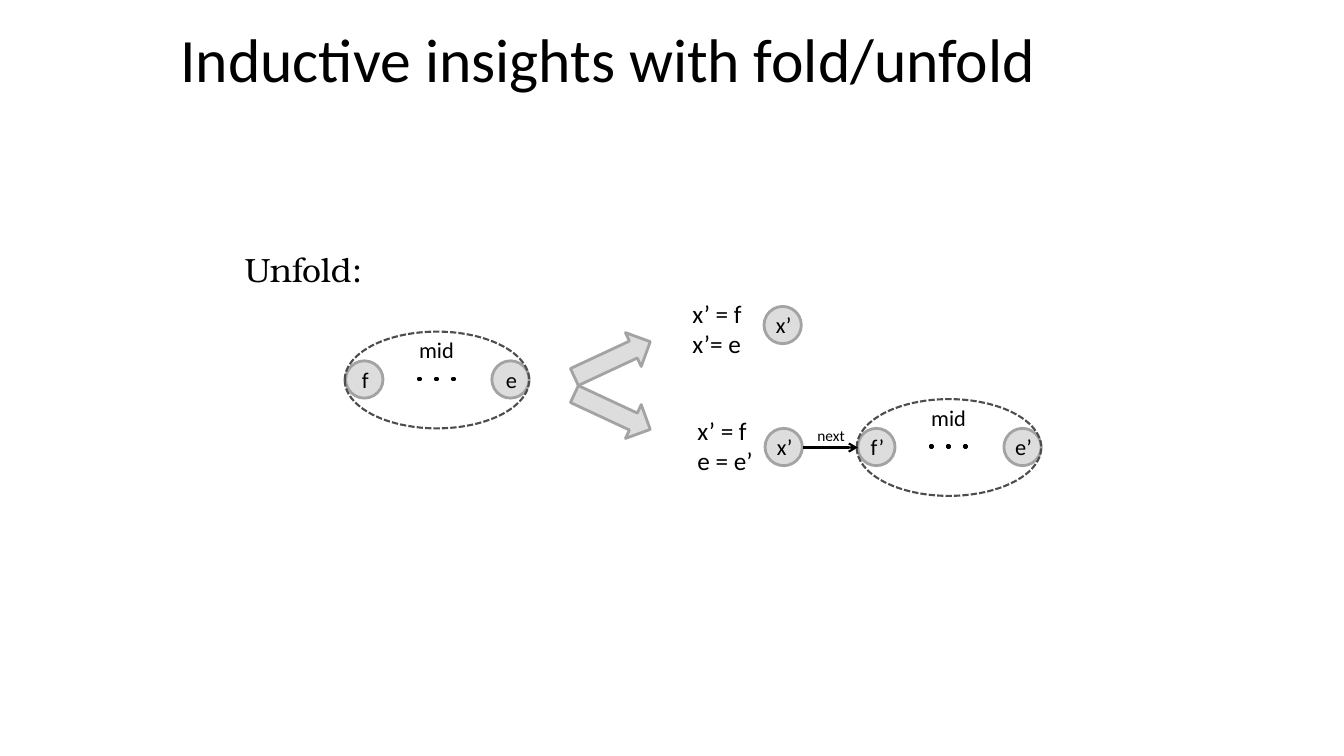
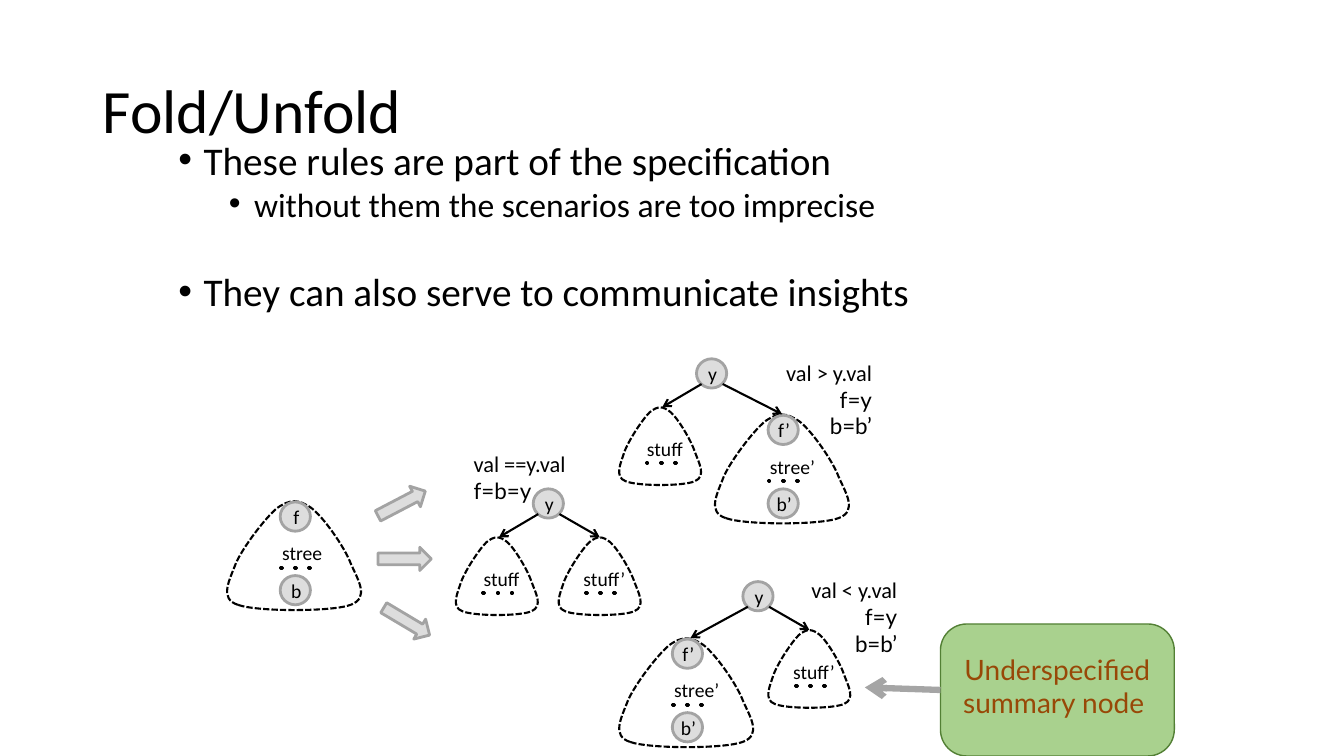
from pptx import Presentation
from pptx.dml.color import RGBColor
from pptx.enum.dml import MSO_LINE
from pptx.enum.shapes import MSO_CONNECTOR, MSO_SHAPE
from pptx.enum.text import MSO_ANCHOR, MSO_AUTO_SIZE, PP_ALIGN
from pptx.oxml.ns import qn
from pptx.oxml.xmlchemy import OxmlElement
from pptx.util import Emu, Pt

PX = 9144
OVAL, RECT = MSO_SHAPE.OVAL, MSO_SHAPE.RECTANGLE
ARROW, ROUND = MSO_SHAPE.RIGHT_ARROW, MSO_SHAPE.ROUNDED_RECTANGLE
LINE, DASH = MSO_CONNECTOR.STRAIGHT, MSO_LINE.SQUARE_DOT
LEFT, MID, RIGHT = PP_ALIGN.LEFT, PP_ALIGN.CENTER, PP_ALIGN.RIGHT
CENTER, TOP = MSO_ANCHOR.MIDDLE, MSO_ANCHOR.TOP
FIXED = MSO_AUTO_SIZE.NONE
BODY, ALT, SERIF = "Calibri", "Lato", "TeX Gyre Bonum"
COLORS = {
    "ink": "000000", "node": "DDDDDD", "edge": "A3A3A3", "ring": "4D4D4D",
    "point": "A5A5A5", "note": "A9D18E", "rim": "538035", "rust": "984807",
}
BLOB = (134, 108)
START = (11, 103)
CURVES = [
    ((-8, 97), (3, 78), (9, 62)),
    ((16, 46), (38, 17), (50, 7)),
    ((63, -2), (71, -2), (84, 7)),
    ((96, 16), (117, 46), (123, 62)),
    ((130, 78), (142, 96), (123, 103)),
    ((105, 110), (30, 110), (11, 103)),
]


def px(*vals):
    """Turn px lengths into EMU."""
    return [Emu(round(val * PX)) for val in vals]


def tint(name):
    """Return a named colour."""
    return RGBColor.from_string(COLORS[name])


def apply(item, form):
    """Set each attribute in a format dict."""
    for key, val in form.items():
        setattr(item, key, val)


def move(item, box):
    """Place a shape or placeholder."""
    apply(item, dict(zip(("left", "top", "width", "height"), px(*box))))


def write(frame, lines, size, face=BODY, color="ink", **form):
    """Fill a frame with lines in one style."""
    frame.text = "\n".join(lines)
    for para in frame.paragraphs:
        apply(para, form)
        apply(para.font, {"size": Pt(size), "name": face})
        para.font.color.rgb = tint(color)


def paint(shape, fill, edge, width):
    """Set fill and outline, without a shadow."""
    shape.shadow.inherit = False
    if fill:
        shape.fill.solid()
        shape.fill.fore_color.rgb = tint(fill)
    else:
        shape.fill.background()
    shape.line.color.rgb = tint(edge)
    shape.line.width = Pt(width)


def draw(slide, kind, box, fill="node", edge="edge", width=2):
    """Add a painted preset shape."""
    shape = slide.shapes.add_shape(kind, *px(*box))
    paint(shape, fill, edge, width)
    return shape


def label(slide, box, lines, size, face=BODY, align=LEFT):
    """Add a text box that does not wrap."""
    frame = slide.shapes.add_textbox(*px(*box)).text_frame
    frame.word_wrap = False
    write(frame, lines, size, face, alignment=align)
    return frame


def rule(slide, box, lines, align):
    """Add a rule label whose later lines use the second face."""
    frame = label(slide, box, lines, 16, align=align)
    for para in frame.paragraphs[1:]:
        para.font.name = ALT


def node(slide, x, y, text, wide=30, high=29, size=14):
    """Add a round node with its name."""
    frame = draw(slide, OVAL, (x, y, wide, high)).text_frame
    apply(frame, {"margin_left": Emu(2 * PX), "margin_right": 0,
                  "vertical_anchor": CENTER, "word_wrap": True})
    write(frame, [text], size, alignment=MID)


def dots(slide, x, y, gap=14, high=1):
    """Add three dots in a row."""
    for step in range(3):
        draw(slide, RECT, (x + step * gap, y, 2, high), "ink", "ink")


def block(slide, x, y, turn=0, wide=53, high=23):
    """Add a block arrow, turned by some degrees."""
    draw(slide, ARROW, (x, y, wide, high)).rotation = turn


def link(slide, start, end, color="ink", width=1.5):
    """Add a straight line with an arrowhead at its end."""
    line = slide.shapes.add_connector(LINE, *px(*start, *end))
    line.line.color.rgb = tint(color)
    line.line.width = Pt(width)
    props = line.element.spPr
    head = OxmlElement("a:tailEnd")
    head.set("type", "arrow")
    props.find(qn("a:ln")).append(head)
    props.append(OxmlElement("a:effectLst"))
    return line


def trace(path, tag, spots=()):
    """Append one drawing step to an outline."""
    step = OxmlElement(tag)
    for x, y in spots:
        spot = OxmlElement("a:pt")
        spot.set("x", str(x))
        spot.set("y", str(y))
        step.append(spot)
    path.append(step)


def blob(slide, x, y, wide, high):
    """Add a dashed rounded triangle made of curves."""
    pen = slide.shapes.build_freeform(*START, scale=PX)
    pen.add_line_segments([curve[-1] for curve in CURVES], close=True)
    shape = pen.convert_to_shape()
    move(shape, (x, y, wide, high))
    path = next(shape.element.iter(qn("a:path")))
    for step in list(path):
        path.remove(step)
    for key, val in zip("wh", BLOB):
        path.set(key, str(val))
    trace(path, "a:moveTo", [START])
    for curve in CURVES:
        trace(path, "a:cubicBezTo", curve)
    trace(path, "a:close")
    paint(shape, None, "ink", 1.5)
    shape.line.dash_style = DASH


def stuff(slide, x, y, mark=""):
    """Add a small summary of a subtree."""
    blob(slide, x, y, 82, 77)
    dots(slide, x + 27, y + 55)
    box = (x + 15, y + 25, 62, 34) if mark else (x + 18, y + 25, 57, 34)
    label(slide, box, ["stuff" + mark], 14)


def stree(slide, x, y, mark=""):
    """Add a large summary with its first and last nodes."""
    blob(slide, x, y, *BLOB)
    node(slide, x + 53, y + 1, "f" + mark)
    node(slide, x + 53, y + 74, "b" + mark)
    dots(slide, x + 53, y + 66)
    label(slide, (x + 45, y + 35, 66 if mark else 61, 34),
          ["stree" + mark], 14)


def tree(slide, x, y, left, right):
    """Add a root with a summary on either side."""
    node(slide, x, y, "y")
    sides = [
        (left, 5, {stuff: (-77, 48, 43), stree: (-123, 56, 71)}),
        (right, 26, {stuff: (25, 48, 41), stree: (18, 55, 67)}),
    ]
    for (kind, mark), root, spots in sides:
        dx, dy, tip = spots[kind]
        kind(slide, x + dx, y + dy, mark)
        link(slide, (x + root, y + 25), (x + dx + tip, y + dy))


def chain(slide, x, y, mark=""):
    """Add a list segment between two end nodes."""
    node(slide, x + 1, y + 29, "f" + mark, 37, 37, 16)
    node(slide, x + 146, y + 29, "e" + mark, 37, 37, 16)
    dots(slide, x + 73, y + 46, 17, 2)
    label(slide, (x + 64, y, 55, 37), ["mid"], 16)
    ring = draw(slide, OVAL, (x, y, 183, 96), None, "ring", 1.5)
    ring.line.dash_style = DASH


def start(deck, layout, text, box):
    """Add a slide with its title."""
    slide = deck.slides.add_slide(deck.slide_layouts[layout])
    title = slide.shapes.title
    move(title, box)
    apply(title.text_frame, {"vertical_anchor": CENTER, "auto_size": FIXED})
    write(title.text_frame, [text], 44, alignment=LEFT, line_spacing=0.9)
    return slide


def points(holder, box, rows):
    """Fill the body placeholder with bullets."""
    move(holder, box)
    frame = holder.text_frame
    apply(frame, {"vertical_anchor": TOP, "auto_size": FIXED})
    frame.text = "\n".join(row[0] for row in rows)
    for para, (_, level, size, space) in zip(frame.paragraphs, rows):
        props = para._p.get_or_add_pPr()
        props.set("marL", str((25 + 50 * level) * PX))
        props.set("indent", str(-25 * PX))
        mark = OxmlElement("a:buChar")
        mark.set("char", "•")
        props.append(mark)
        apply(para, {"level": level, "line_spacing": 0.8,
                     "space_before": Pt(space), "alignment": LEFT})
        apply(para.font, {"size": Pt(size), "name": BODY})
        para.font.color.rgb = tint("ink")


def insight(deck):
    """Build the list unfolding slide."""
    slide = start(deck, 5, "Inductive insights with fold/unfold",
                  (169, 0, 997, 125))
    label(slide, (233, 242, 140, 50), ["Unfold:"], 24, SERIF)
    chain(slide, 342, 329)
    chain(slide, 850, 396, "’")
    for x, y in ((758, 304), (759, 425)):
        node(slide, x, y, "x’", 37, 37, 16)
    link(slide, (797, 444), (851, 444))
    label(slide, (801, 418, 48, 29), ["next"], 11)
    label(slide, (677, 291, 76, 71), ["x’ = f", "x’= e"], 18)
    label(slide, (682, 407, 76, 71), ["x’ = f", "e = e’"], 18)
    block(slide, 566, 390, 25, 83, 37)
    block(slide, 566, 338, 335, 83, 37)


def callout(slide):
    """Add the note and its pointer."""
    note = draw(slide, ROUND, (933, 619, 232, 131), "note", "rim", 1)
    note.adjustments[0] = 0.2
    frame = note.text_frame
    apply(frame, {"margin_top": Emu(30 * PX), "margin_bottom": Emu(38 * PX),
                  "word_wrap": True, "vertical_anchor": CENTER})
    write(frame, ["Underspecified summary node "], 20, ALT, "rust",
          alignment=MID)
    line = link(slide, (933, 684), (858, 682), "point", 4.5)
    line.begin_connect(note, 1)


def folding(deck):
    """Build the tree unfolding slide."""
    slide = start(deck, 1, "Fold/Unfold", (92, 40, 1150, 145))
    points(slide.placeholders[1], (167, 139, 983, 194), [
        ("These rules are part of the specification", 0, 28, 0),
        ("without them the scenarios are too imprecise", 1, 24, 6),
        ("They can also serve to communicate insights", 0, 28, 38),
    ])
    stree(slide, 225, 497)
    tree(slide, 529, 485, (stuff, ""), (stuff, "’"))
    tree(slide, 737, 577, (stree, "’"), (stuff, "’"))
    tree(slide, 691, 356, (stuff, ""), (stree, "’"))
    for x, y, turn in ((372, 488, 332.4), (375, 543, 0), (377, 605, 30.8)):
        block(slide, x, y, turn)
    rule(slide, (460, 442, 119, 64), ["val ==y.val", "f=b=y"], LEFT)
    for x, y, sign in ((787, 567, "<"), (762, 351, ">")):
        rule(slide, (x, y, 113, 91),
             [f"val {sign} y.val", "f=y", "b=b’"], RIGHT)
    callout(slide)


def main():
    """Build and save the deck."""
    deck = Presentation()
    deck.slide_width, deck.slide_height = px(4000 / 3, 750)
    insight(deck)
    folding(deck)
    deck.save("out.pptx")


if __name__ == "__main__":
    main()
